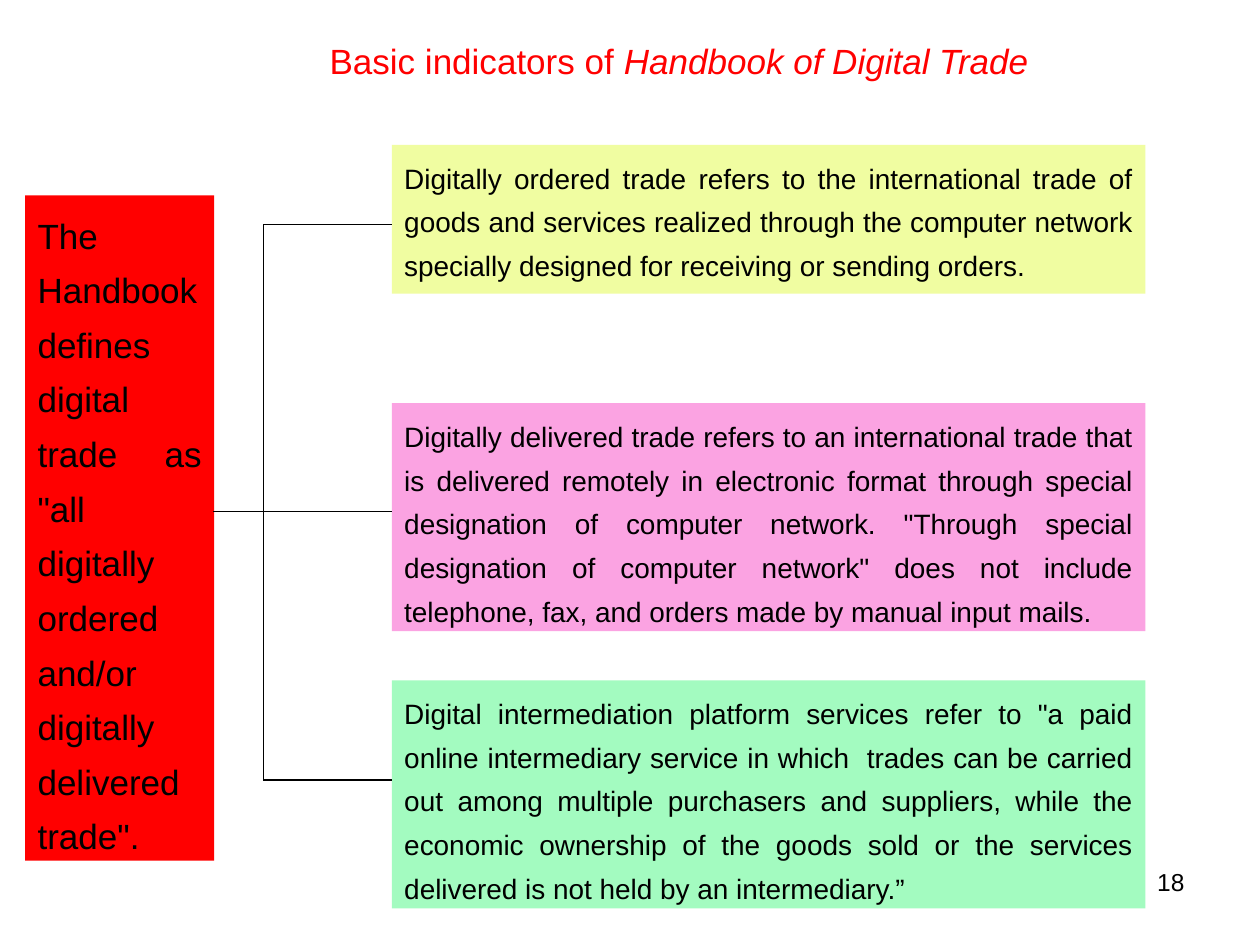
from lxml.etree import SubElement
from pptx import Presentation
from pptx.dml.color import RGBColor
from pptx.enum.shapes import MSO_CONNECTOR, MSO_SHAPE
from pptx.enum.text import MSO_ANCHOR, MSO_AUTO_SIZE, PP_ALIGN
from pptx.oxml.ns import qn
from pptx.util import Inches, Pt

COLS, ROWS = 100, 75
HUES = {
    "ink": "000000", "red": "FF0000", "lemon": "F0FDA1",
    "pink": "FBA3E2", "mint": "A3FBC0",
}


class Sheet:
    """Style and current slide; lengths are columns and rows of a grid."""
    font = "Arial"

    def __init__(self, deck):
        self.wide = deck.slide_width / COLS
        self.high = deck.slide_height / ROWS
        self.slide = deck.slides.add_slide(deck.slide_layouts[5])

    def hue(self, name):
        return RGBColor.from_string(HUES[name])

    def spot(self, x, y):
        return round(x * self.wide), round(y * self.high)

    def area(self, x, y, w, h):
        return *self.spot(x, y), *self.spot(w, h)

    def fill_text(self, shape, runs, size, hue, align, lead=1.0):
        frame = shape.text_frame
        frame.word_wrap = True
        frame.auto_size = MSO_AUTO_SIZE.NONE
        frame.vertical_anchor = MSO_ANCHOR.TOP
        para = frame.paragraphs[0]
        para.alignment, para.line_spacing = align, lead
        font = para.font
        font.name, font.size = self.font, Pt(size)
        font.color.rgb = self.hue(hue)
        for text, slant in runs:
            run = para.add_run()
            run.text = text
            if slant:
                run.font.italic = True

    def title(self, box, runs):
        head = self.slide.shapes.title
        head.left, head.top, head.width, head.height = self.area(*box)
        self.fill_text(head, runs, 20, "red", PP_ALIGN.CENTER)

    def panel(self, box, fill, text, size):
        shape = self.slide.shapes.add_shape(MSO_SHAPE.RECTANGLE, *self.area(*box))
        shape.shadow.inherit = False
        shape.fill.solid()
        shape.fill.fore_color.rgb = self.hue(fill)
        shape.line.fill.background()
        self.fill_text(shape, [(text, False)], size, "ink", PP_ALIGN.JUSTIFY, 1.3)

    def label(self, box, text):
        shape = self.slide.shapes.add_textbox(*self.area(*box))
        self.fill_text(shape, [(text, False)], 14, "ink", PP_ALIGN.RIGHT)

    def line(self, start, end):
        link = self.slide.shapes.add_connector(
            MSO_CONNECTOR.STRAIGHT, *self.spot(*start), *self.spot(*end))
        link.line.color.rgb = self.hue("ink")
        link.line.width = Pt(0.75)
        SubElement(link._element.spPr, qn("a:effectLst"))


def main():
    deck = Presentation()
    deck.slide_width, deck.slide_height = Inches(10), Inches(7.5)
    sheet = Sheet(deck)

    # Page number and title
    sheet.label((71.7, 68.3, 23.3, 5.2), "18")
    sheet.title((16.9, 2.6, 74, 5), [("Basic indicators of ", False),
                                     ("Handbook of Digital Trade", True)])

    # Definition on the left
    sheet.panel((2, 15.5, 15, 52.8), "red",
                'The Handbook defines digital trade as "all digitally ordered '
                'and/or digitally delivered trade".', 20)

    # Three kinds of trade: top, height, joining row, fill, text
    left, width, trunk = 31.1, 59.8, 20.9
    kinds = [
        (11.5, 11.8, 17.8, "lemon",
         "Digitally ordered trade refers to the international trade of goods "
         "and services realized through the computer network specially "
         "designed for receiving or sending orders."),
        (32, 18.1, 40.6, "pink",
         "Digitally delivered trade refers to an international trade that is "
         "delivered remotely in electronic format through special designation "
         'of computer network. "Through special designation of computer '
         'network" does not include telephone, fax, and orders made by manual '
         "input mails."),
        (54, 18.1, 61.9, "mint",
         'Digital intermediation platform services refer to "a paid online '
         "intermediary service in which  trades can be carried out among "
         "multiple purchasers and suppliers, while the economic ownership of "
         "the goods sold or the services delivered is not held by an "
         "intermediary.”"),
    ]
    for top, height, row, fill, text in kinds:
        sheet.panel((left, top, width, height), fill, text, 16)

    # Bracket: a branch to each kind, a stem to the definition, one trunk
    rows = [kind[2] for kind in kinds]
    for row, start in zip(rows, (trunk, 16.9, trunk)):
        sheet.line((start, row), (left, row))
    sheet.line((trunk, rows[0]), (trunk, rows[-1]))

    deck.save("out.pptx")


if __name__ == "__main__":
    main()
